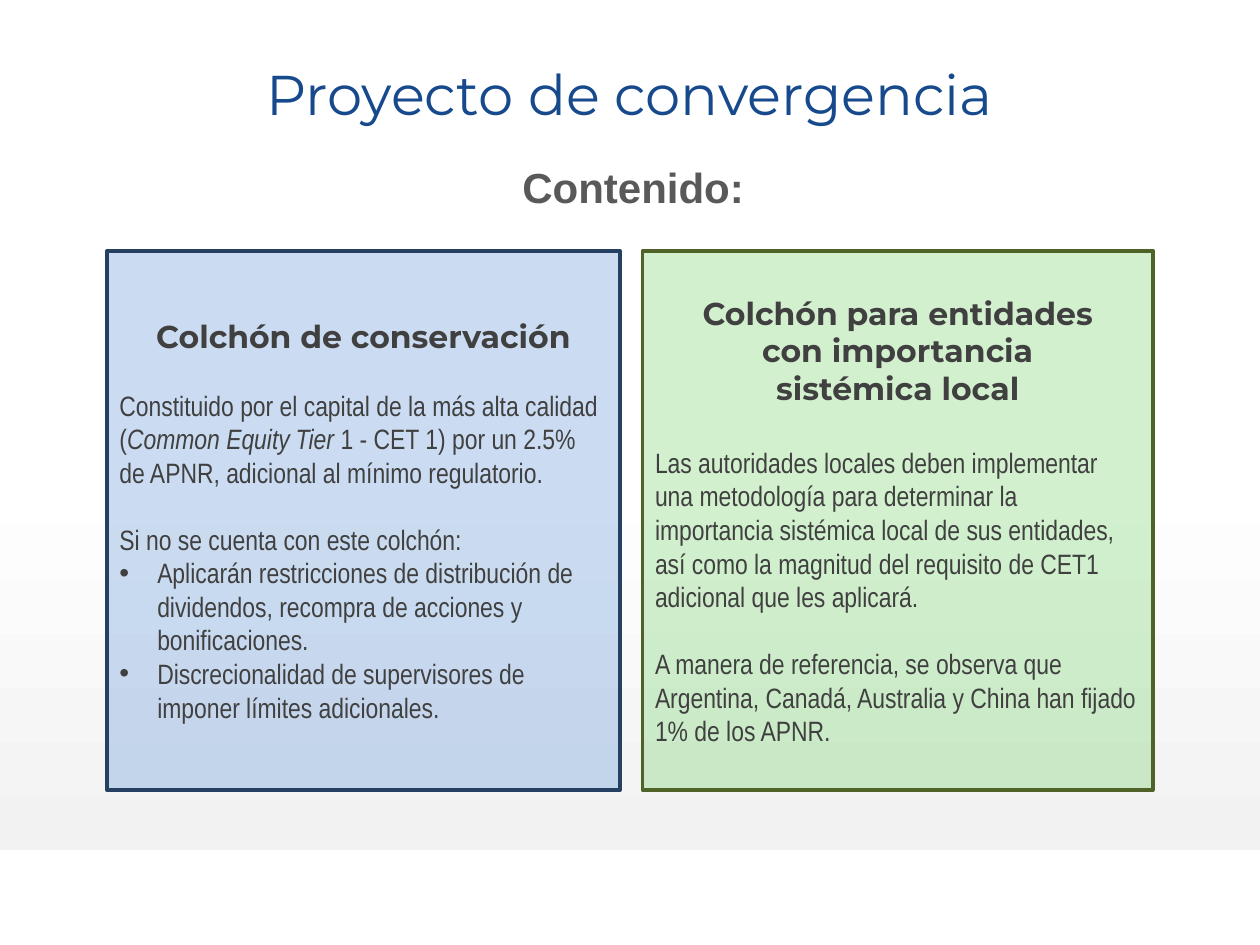
from lxml import etree
from pptx import Presentation
from pptx.dml.color import RGBColor
from pptx.enum.shapes import MSO_SHAPE
from pptx.enum.text import MSO_ANCHOR, MSO_AUTO_SIZE, PP_ALIGN
from pptx.oxml.ns import qn
from pptx.util import Inches, Pt

RECTANGLE, ROUNDED = MSO_SHAPE.RECTANGLE, MSO_SHAPE.ROUNDED_RECTANGLE
LEFT, CENTER = PP_ALIGN.LEFT, PP_ALIGN.CENTER
TOP, MIDDLE = MSO_ANCHOR.TOP, MSO_ANCHOR.MIDDLE
FIT_SHAPE = MSO_AUTO_SIZE.SHAPE_TO_FIT_TEXT
TITLE_ONLY = 5

WHITE = RGBColor(0xFF, 0xFF, 0xFF)
PALE_GREY = RGBColor(0xF2, 0xF2, 0xF2)
TITLE_BLUE = RGBColor(0x17, 0x49, 0x8D)
GREY = RGBColor(0x59, 0x59, 0x59)
DARK_GREY = RGBColor(0x40, 0x40, 0x40)
GREEN = RGBColor(0x6A, 0xCF, 0x5D)
DARK_GREEN = RGBColor(0x4F, 0x62, 0x28)
BLUE = RGBColor(0x55, 0x8E, 0xD5)
DARK_BLUE = RGBColor(0x25, 0x40, 0x61)

COLUMNS, ROWS = 100, 75
PANEL_TOP, PANEL_HEIGHT = 19.9, 42.8
BULLET_INDENT = Inches(0.3)


class SlideBuilder:
    formats = {
        "title": {"name": "Montserrat", "size": Pt(32), "bold": False, "color": TITLE_BLUE},
        "subtitle": {"name": "Arial", "size": Pt(24), "bold": True, "color": GREY},
        "heading": {"name": "Montserrat", "size": Pt(18), "bold": True, "color": DARK_GREY},
        "body": {"name": "Arial Narrow", "size": Pt(16), "bold": False, "color": DARK_GREY},
        "term": {"name": "Arial Narrow", "size": Pt(16), "bold": False, "italic": True,
                 "color": DARK_GREY},
    }

    def __init__(self, deck):
        self.deck = deck
        self.page = deck.slides.add_slide(deck.slide_layouts[TITLE_ONLY])

    def area(self, left, top, width, height):
        column, row = self.deck.slide_width / COLUMNS, self.deck.slide_height / ROWS
        return [round(n) for n in (left * column, top * row, width * column, height * row)]

    def apply(self, font, style):
        for key, value in self.formats[style].items():
            if key == "color":
                font.color.rgb = value
            else:
                setattr(font, key, value)

    def put_text(self, para, text, style, align=LEFT):
        para.alignment = align
        para.text = text
        for span in para.runs:
            self.apply(span.font, style)

    def title(self, text, area):
        box = self.page.shapes.title
        box.left, box.top, box.width, box.height = self.area(*area)
        frame = box.text_frame
        frame.word_wrap, frame.auto_size = False, FIT_SHAPE
        frame.vertical_anchor = TOP
        self.put_text(frame.paragraphs[0], text, "title", CENTER)

    def subtitle(self, text, area):
        frame = self.page.shapes.add_textbox(*self.area(*area)).text_frame
        frame.word_wrap = True
        self.put_text(frame.paragraphs[0], text, "subtitle", CENTER)

    def fade(self, area, colors):
        band = self.page.shapes.add_shape(RECTANGLE, *self.area(*area))
        band.shadow.inherit = False
        band.line.fill.background()
        band.fill.gradient()
        band.fill.gradient_angle = 270
        for stop, color in zip(band.fill.gradient_stops, colors):
            stop.color.rgb = color

    def panel(self, area, fill, line, heading, gap, paragraphs):
        box = self.page.shapes.add_shape(ROUNDED, *self.area(*area))
        box.adjustments[0] = 0
        box.shadow.inherit = False
        box.fill.solid()
        box.fill.fore_color.rgb = fill
        color = box.element.spPr.find(qn("a:solidFill")).find(qn("a:srgbClr"))
        etree.SubElement(color, qn("a:alpha"), val="30000")
        box.line.color.rgb, box.line.width = line, Pt(2)
        frame = box.text_frame
        frame.word_wrap, frame.vertical_anchor = True, MIDDLE
        self.put_text(frame.paragraphs[0], heading, "heading", CENTER)
        for spans in paragraphs:
            para = frame.add_paragraph()
            para.alignment, para.space_before = LEFT, Pt(gap)
            gap = 19
            for text, style in spans:
                span = para.add_run()
                span.text = text
                self.apply(span.font, style)
        return frame

    def bullets(self, frame, items):
        for item in items:
            para = frame.add_paragraph()
            props = para._p.get_or_add_pPr()
            props.set("marL", str(BULLET_INDENT))
            props.set("indent", str(-BULLET_INDENT))
            etree.SubElement(props, qn("a:buFont"), typeface="Arial")
            etree.SubElement(props, qn("a:buChar"), char="•")
            self.put_text(para, item, "body")


def main():
    deck = Presentation()
    deck.slide_width, deck.slide_height = Inches(10), Inches(7.5)
    slide = SlideBuilder(deck)
    slide.fade((0, 37.4, COLUMNS, 30.1), (WHITE, PALE_GREY))
    slide.title("Proyecto de convergencia", (17, 4.2, 66, 6.4))
    slide.subtitle("Contenido:", (8.5, 12.3, 83.5, 52.4))
    slide.panel(
        (51, PANEL_TOP, 40.5, PANEL_HEIGHT), GREEN, DARK_GREEN,
        "Colchón para entidades\vcon importancia\vsistémica local", 22,
        [[("Las autoridades locales deben implementar una metodología para determinar la "
           "importancia sistémica local de sus entidades, así como la magnitud del requisito "
           "de CET1 adicional que les aplicará.", "body")],
         [("A manera de referencia, se observa que Argentina, Canadá, Australia y China han "
           "fijado 1% de los APNR.", "body")]])
    conservation = slide.panel(
        (8.5, PANEL_TOP, 40.7, PANEL_HEIGHT), BLUE, DARK_BLUE,
        "Colchón de conservación", 19,
        [[("Constituido por el capital de la más alta calidad (", "body"),
          ("Common Equity Tier", "term"),
          (" 1 - CET 1) por un 2.5% de APNR, adicional al mínimo regulatorio.", "body")],
         [("Si no se cuenta con este colchón:", "body")]])
    slide.bullets(conservation, [
        "Aplicarán restricciones de distribución de dividendos, recompra de acciones y "
        "bonificaciones.",
        "Discrecionalidad de supervisores de imponer límites adicionales."])
    deck.save("out.pptx")


if __name__ == "__main__":
    main()
